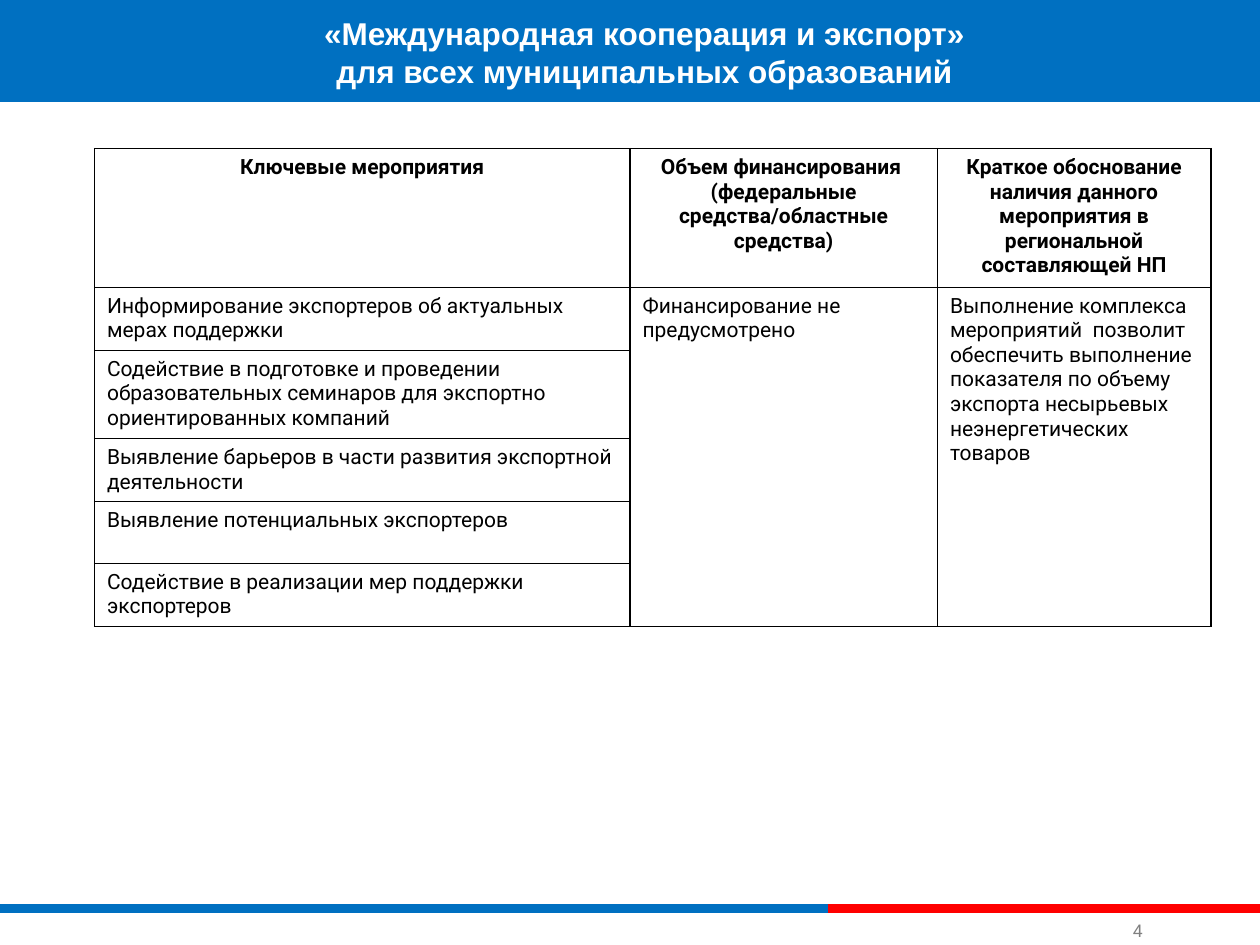
from pptx import Presentation
from pptx.dml.color import RGBColor
from pptx.enum.shapes import MSO_CONNECTOR, MSO_SHAPE
from pptx.enum.text import MSO_ANCHOR, MSO_AUTO_SIZE, PP_ALIGN
from pptx.oxml.ns import qn
from pptx.util import Inches, Pt
from lxml.etree import SubElement

COLORS = {
    "blue": "0070C1",
    "red": "FF0000",
    "white": "FFFFFF",
    "black": "000000",
    "gray": "808080",
}

TITLE = ["«Международная кооперация и экспорт»", "для всех муниципальных образований"]
HEADERS = [
    "Ключевые мероприятия",
    "Объем финансирования  (федеральные средства/областные средства)",
    "Краткое обоснование наличия данного мероприятия в региональной составляющей НП",
]
ACTIVITIES = [
    "Информирование экспортеров об актуальных мерах поддержки",
    "Содействие в подготовке и проведении образовательных семинаров "
    "для экспортно ориентированных компаний",
    "Выявление барьеров в части развития экспортной деятельности",
    "Выявление потенциальных экспортеров",
    "Содействие в реализации мер поддержки экспортеров",
]
FUNDING = "Финансирование не предусмотрено"
RATIONALE = (
    "Выполнение комплекса мероприятий  позволит обеспечить выполнение "
    "показателя по объему экспорта несырьевых неэнергетических товаров"
)
COLUMN_WIDTHS = [4.25, 2.44, 2.17]
ROW_HEIGHTS = [1.1, 0.5, 0.7, 0.5, 0.49, 0.5]


def color(name):
    return RGBColor.from_string(COLORS[name])


def style_paragraph(paragraph, size, font_name, color_name, bold=False, align=PP_ALIGN.LEFT):
    paragraph.alignment = align
    font = paragraph.font
    font.size = Pt(size)
    font.name = font_name
    font.bold = bold
    font.color.rgb = color(color_name)


def add_band(slide, left, top, width, height):
    band = slide.shapes.add_shape(
        MSO_SHAPE.RECTANGLE, Inches(left), Inches(top), Inches(width), Inches(height)
    )
    band.shadow.inherit = False
    band.fill.solid()
    band.fill.fore_color.rgb = color("blue")
    band.line.fill.background()


def add_rule(slide, start, end, top, color_name):
    rule = slide.shapes.add_connector(
        MSO_CONNECTOR.STRAIGHT, Inches(start), Inches(top), Inches(end), Inches(top)
    )
    rule.line.width = Pt(5)
    rule.line.color.rgb = color(color_name)
    SubElement(rule._element.spPr, qn("a:effectLst"))


def add_text(slide, box, lines, anchor=MSO_ANCHOR.TOP, wrap=True, **style):
    shape = slide.shapes.add_textbox(*(Inches(value) for value in box))
    frame = shape.text_frame
    frame.word_wrap = wrap
    frame.auto_size = MSO_AUTO_SIZE.SHAPE_TO_FIT_TEXT
    frame.vertical_anchor = anchor
    frame.margin_left = frame.margin_right = Inches(0.05)
    frame.margin_top = frame.margin_bottom = Inches(0.05)
    frame.text = "\n".join(lines)
    for paragraph in frame.paragraphs:
        style_paragraph(paragraph, **style)


def set_borders(cell):
    properties = cell._tc.get_or_add_tcPr()
    for side in ("a:lnL", "a:lnR", "a:lnT", "a:lnB"):
        border = SubElement(properties, qn(side), w=str(Pt(1)))
        fill = SubElement(border, qn("a:solidFill"))
        SubElement(fill, qn("a:srgbClr"), val=COLORS["black"])


def add_activity_table(slide, left, top):
    shape = slide.shapes.add_table(
        len(ROW_HEIGHTS), len(COLUMN_WIDTHS), Inches(left), Inches(top),
        Inches(sum(COLUMN_WIDTHS)), Inches(sum(ROW_HEIGHTS)),
    )
    table = shape.table
    for column, width in zip(table.columns, COLUMN_WIDTHS):
        column.width = Inches(width)
    for row, height in zip(table.rows, ROW_HEIGHTS):
        row.height = Inches(height)

    # Funding and rationale each span all activities
    last_row = len(ACTIVITIES)
    for column_index in (1, 2):
        table.cell(1, column_index).merge(table.cell(last_row, column_index))

    rows = [HEADERS, [ACTIVITIES[0], FUNDING, RATIONALE]]
    rows += [[activity, "", ""] for activity in ACTIVITIES[1:]]
    for row_index, texts in enumerate(rows):
        is_header = row_index == 0
        for column_index, text in enumerate(texts):
            cell = table.cell(row_index, column_index)
            cell.text = text
            style_paragraph(
                cell.text_frame.paragraphs[0], 12, "Roboto", "black", bold=is_header,
                align=PP_ALIGN.CENTER if is_header else PP_ALIGN.LEFT,
            )
            set_borders(cell)
            cell.fill.background()


def main():
    presentation = Presentation()
    presentation.slide_width = Inches(10)
    presentation.slide_height = Inches(7.5)
    slide = presentation.slides.add_slide(presentation.slide_layouts[6])

    # Footer rules and header band
    add_rule(slide, 0, 6.57, 7.21, "blue")
    add_rule(slide, 6.57, 10, 7.21, "red")
    add_band(slide, 0, -0.03, 10, 0.84)

    # Page number and title
    add_text(slide, (8.94, 7.27, 0.19, 0.25), ["4"], anchor=MSO_ANCHOR.BOTTOM, wrap=False,
             size=10, font_name="Roboto", color_name="gray")
    add_text(slide, (2.42, 0.06, 5.39, 0.71), TITLE, size=18, font_name="Arial",
             color_name="white", bold=True, align=PP_ALIGN.CENTER)

    # Activities, funding and rationale
    add_activity_table(slide, 0.75, 1.18)

    presentation.save("out.pptx")


if __name__ == "__main__":
    main()
